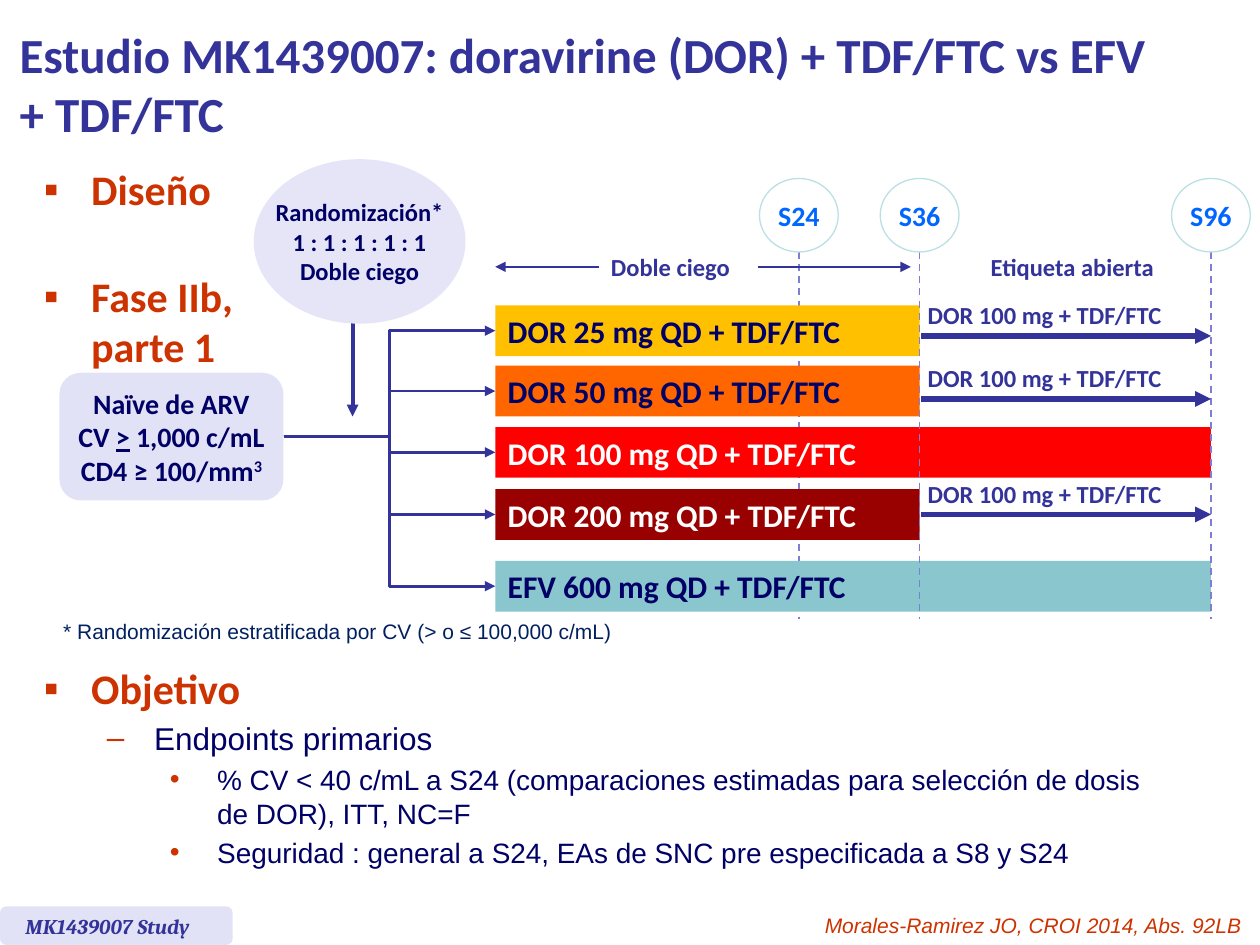
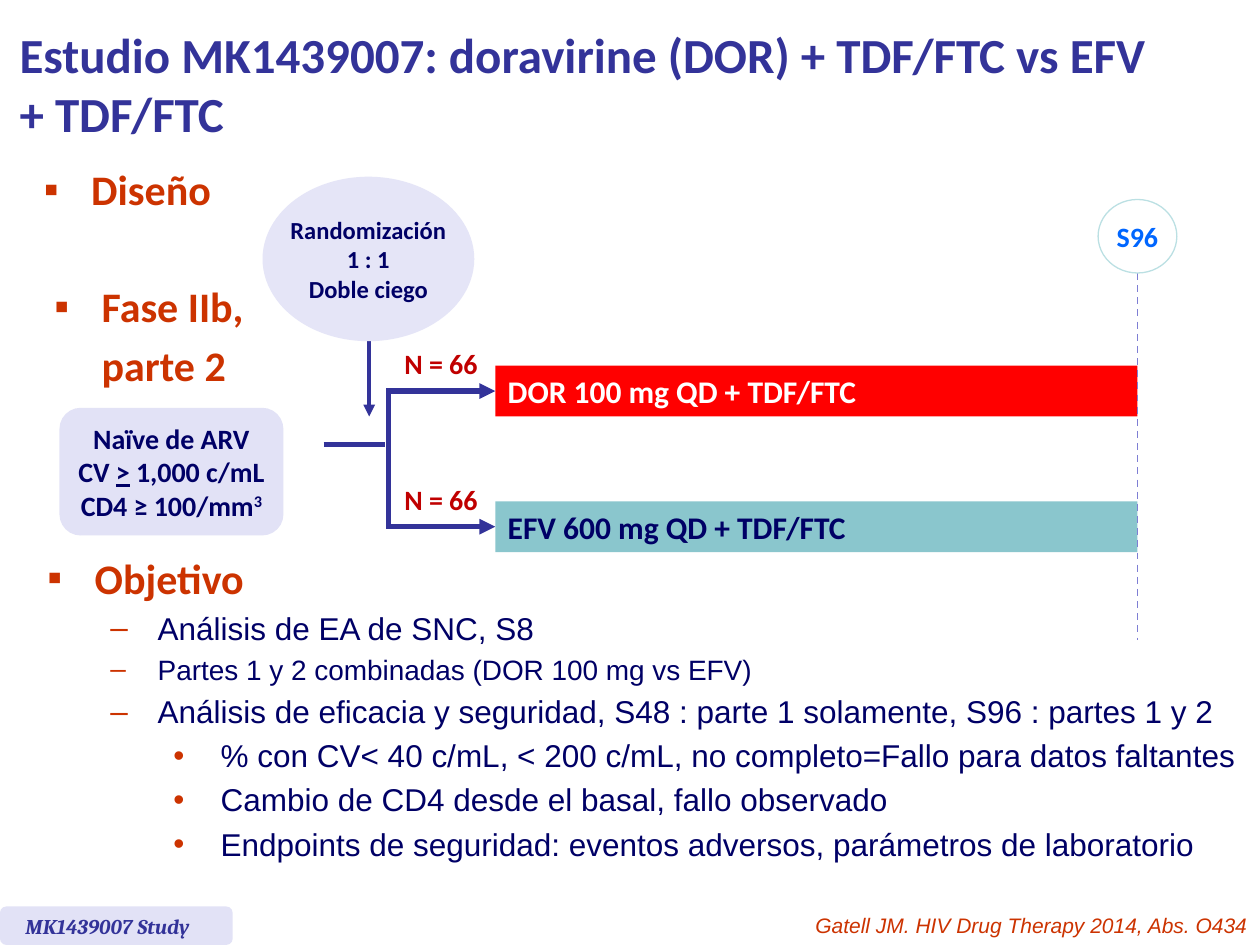
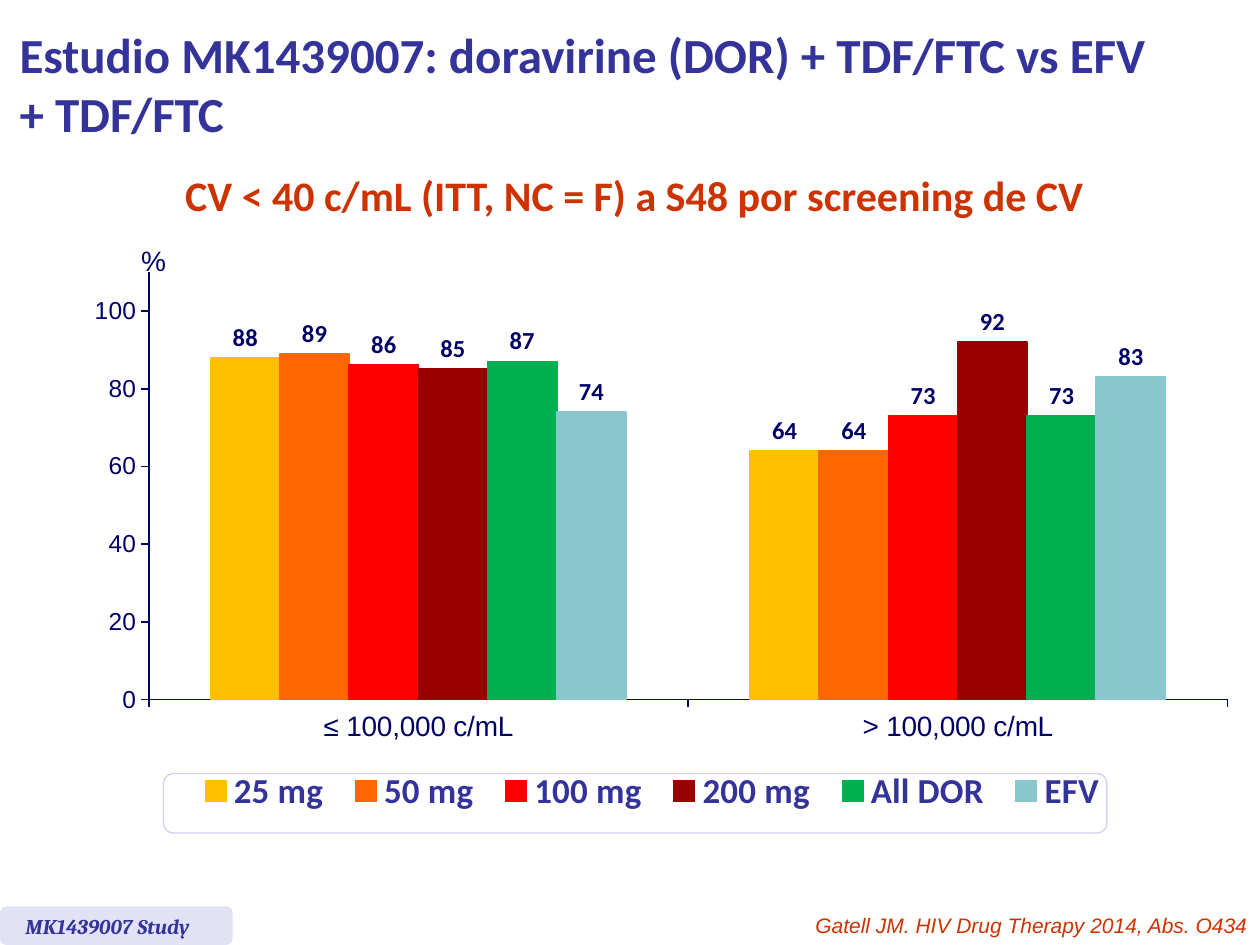
from dataclasses import dataclass

from lxml import etree
from pptx import Presentation
from pptx.chart.data import CategoryChartData
from pptx.dml.color import RGBColor
from pptx.enum.chart import XL_CHART_TYPE as CHART, XL_LABEL_POSITION as LABEL
from pptx.enum.chart import XL_LEGEND_POSITION as LEGEND, XL_TICK_MARK as TICK
from pptx.enum.dml import MSO_LINE
from pptx.enum.shapes import MSO_CONNECTOR as CONN, MSO_SHAPE as SHAPE
from pptx.enum.text import MSO_ANCHOR as ANCHOR, MSO_AUTO_SIZE as AUTO, PP_ALIGN as ALIGN
from pptx.oxml.ns import qn
from pptx.util import Pt


@dataclass(frozen=True)
class Theme:
    indigo: str = "333399"
    navy: str = "000066"
    note: str = "002060"
    rust: str = "CC3300"
    count: str = "C00000"
    week: str = "0066FF"
    week_edge: str = "BBE0E3"
    dash: str = "7E7ED4"
    lilac: str = "E5E5F7"
    panel: str = "E2E2F6"
    legend_edge: str = "D0D0F0"
    white: str = "FFFFFF"
    dor25: str = "FFC000"
    dor50: str = "FF6600"
    dor100: str = "FF0000"
    dor200: str = "990000"
    all_dor: str = "00B050"
    efv: str = "8AC6CD"
    title: int = 28
    heading: int = 24
    legend: int = 20
    body: int = 18
    label: int = 16
    small: int = 14
    foot: int = 12
    main: str = "Calibri"
    plain: str = "Arial"
    serif: str = "Cambria"


T = Theme()
TITLE = "Estudio MK1439007: doravirine (DOR) + TDF/FTC vs EFV \v+ TDF/FTC"
GATELL = "Gatell JM. HIV Drug Therapy 2014, Abs. O434"
CRITERIA = ["Naïve de ARV", [("CV ", ""), (">", "under"), (" 1,000 c/mL", "")],
            [("CD4 ≥ 100/mm", ""), ("3", "super")]]
BAR_X, BAR_H = 283, 29
HANG = 27
BULLETS = {0: ("▪", 27), 1: ("–", 63), 2: ("•", 99)}


def rgb(color):
    return RGBColor.from_string(color)


def set_font(font, size, color, name=T.main, bold=False, italic=False):
    font.size, font.name = Pt(size), name
    font.bold, font.italic = bold, italic
    font.color.rgb = rgb(color)


def write(tf, lines, size, color, align=ALIGN.LEFT, **font):
    """Fill a frame; a line is a string or a list of (text, mark) runs."""
    for i, line in enumerate(lines):
        p = tf.paragraphs[0] if i == 0 else tf.add_paragraph()
        p.alignment = align
        if isinstance(line, str):
            p.text = line
        else:
            for text, mark in line:
                r = p.add_run()
                r.text = text
                if mark == "under":
                    r.font.underline = True
                elif mark == "super":
                    r._r.get_or_add_rPr().set("baseline", "30000")
        set_font(p.font, size, color, **font)


def add_text(s, x, y, w, h, lines, size, color, align=ALIGN.LEFT, **font):
    tf = s.shapes.add_textbox(Pt(x), Pt(y), Pt(w), Pt(h)).text_frame
    tf.word_wrap = True
    write(tf, lines, size, color, align, **font)


def add_block(s, kind, x, y, w, h, fill, edge=None):
    sp = s.shapes.add_shape(kind, Pt(x), Pt(y), Pt(w), Pt(h))
    sp.shadow.inherit = False
    sp.fill.solid()
    sp.fill.fore_color.rgb = rgb(fill)
    if edge:
        sp.line.color.rgb = rgb(edge)
        sp.line.width = Pt(0.75)
    else:
        sp.line.fill.background()
    sp.text_frame.vertical_anchor = ANCHOR.MIDDLE
    sp.text_frame.word_wrap = False
    return sp


def add_line(s, x1, y1, x2, y2, width, color=T.indigo, kind=CONN.STRAIGHT,
             arrow=True, dashed=False):
    c = s.shapes.add_connector(kind, Pt(x1), Pt(y1), Pt(x2), Pt(y2))
    c.line.color.rgb = rgb(color)
    c.line.width = Pt(width)
    if dashed:
        c.line.dash_style = MSO_LINE.DASH
    sp_pr = c._element.spPr
    if arrow:
        etree.SubElement(sp_pr.find(qn("a:ln")), qn("a:tailEnd"), type="triangle")
    etree.SubElement(sp_pr, qn("a:effectLst"))
    return c


def add_bullets(s, x, y, w, h, items, gap=0.2):
    """Items are (level, text, size); level None continues a heading unmarked."""
    tf = s.shapes.add_textbox(Pt(x), Pt(y), Pt(w), Pt(h)).text_frame
    tf.word_wrap = True
    for i, (level, text, size) in enumerate(items):
        p = tf.paragraphs[0] if i == 0 else tf.add_paragraph()
        p.text = text
        if i:
            p.space_before = Pt(round(size * gap, 1))
        mark, margin = BULLETS[level or 0]
        p_pr = p._p.get_or_add_pPr()
        p_pr.set("marL", str(Pt(margin)))
        p_pr.set("indent", str(0 if level is None else -Pt(HANG)))
        if level is not None:
            color = etree.SubElement(p_pr, qn("a:buClr"))
            etree.SubElement(color, qn("a:srgbClr"), val=T.rust)
            etree.SubElement(p_pr, qn("a:buFont"), typeface=T.plain)
            etree.SubElement(p_pr, qn("a:buChar"), char=mark)
        if level:
            set_font(p.font, size, T.navy, T.plain)
        else:
            set_font(p.font, size, T.rust, bold=True)


def add_slide(prs, citation):
    s = prs.slides.add_slide(prs.slide_layouts[5])
    title = s.shapes.title
    title.left, title.top, title.width, title.height = Pt(4), Pt(4), Pt(711), Pt(87)
    tf = title.text_frame
    tf.auto_size, tf.word_wrap = AUTO.NONE, True
    tf.vertical_anchor = ANCHOR.MIDDLE
    write(tf, [TITLE], T.title, T.indigo, bold=True)

    chip = add_block(s, SHAPE.ROUNDED_RECTANGLE, 0, 518, 133, 22, T.panel)
    chip.text_frame.margin_left = Pt(13.5)
    chip.text_frame.word_wrap = True
    write(chip.text_frame, ["MK1439007 Study"], T.foot, T.indigo,
          name=T.serif, bold=True, italic=True)
    add_text(s, 420, 518, 300, 22, [citation], T.foot, T.rust, ALIGN.RIGHT,
             name=T.plain, italic=True)
    return s


def add_week(s, week, x, y):
    """Draw a week circle centred on x, with its dashed line below."""
    w, h = 45, 42
    add_line(s, x, y + h, x, y + 252, 1, T.dash, arrow=False, dashed=True)
    sp = add_block(s, SHAPE.OVAL, x - w / 2, y, w, h, T.white, T.week_edge)
    write(sp.text_frame, [week], T.label, T.week, ALIGN.CENTER, bold=True)


def add_arm(s, drug, y, end, fill, color=T.navy):
    sp = add_block(s, SHAPE.RECTANGLE, BAR_X, y, end - BAR_X, BAR_H, fill)
    sp.text_frame.word_wrap = True
    write(sp.text_frame, [f"{drug} mg QD + TDF/FTC"], T.body, color, bold=True)
    return sp


def add_randomization(s, x, y, arrow_x, lines):
    add_line(s, arrow_x, 181, arrow_x, 238, 2.25)
    sp = add_block(s, SHAPE.OVAL, x, y, 121, 94, T.lilac)
    write(sp.text_frame, lines, T.small, T.navy, ALIGN.CENTER, bold=True)


def add_population(s, y):
    sp = add_block(s, SHAPE.ROUNDED_RECTANGLE, 34, y, 128, 73, T.panel)
    write(sp.text_frame, CRITERIA, T.label, T.navy, ALIGN.CENTER, bold=True)
    return sp


def add_design_headings(s, part, x, y, gap):
    add_bullets(s, 18, 90, 143, 45, [(0, "Diseño", T.heading)])
    add_bullets(s, x, y, 140, 66,
                [(0, "Fase IIb,", T.heading), (None, part, T.heading)], gap)


def build_part1(prs):
    s = add_slide(prs, "Morales-Ramirez JO, CROI 2014, Abs. 92LB ")
    w24, w36, w96, week_y = 456.5, 525.5, 692, 102
    add_week(s, "S24", w24, week_y)
    add_design_headings(s, "parte 1", 18, 151, 0)
    add_randomization(s, 145, 91, 201.5, ["Randomización*", "1 : 1 : 1 : 1 : 1", "Doble ciego"])
    population = add_population(s, 213)

    arms = [("DOR 25", 174.5, w36, T.dor25, T.navy),
            ("DOR 50", 209, w36, T.dor50, T.navy),
            ("DOR 100", 244, w96, T.dor100, T.white),
            ("DOR 200", 279.5, w36, T.dor200, T.white),
            ("EFV 600", 320.5, w96, T.efv, T.navy)]
    for arm in arms:
        bar = add_arm(s, *arm)
        c = add_line(s, 162, 250, BAR_X, 250, 1.5, kind=CONN.ELBOW)
        c.begin_connect(population, 3)
        c.end_connect(bar, 1)
    for week, x in (("S36", w36), ("S96", w96)):
        add_week(s, week, x, week_y)

    for y in (192, 228, 294):
        add_line(s, w36 + 1, y, w96, y, 3)
        add_text(s, 523, y - 24, 175, 24, ["DOR 100 mg + TDF/FTC"],
                 T.small, T.indigo, bold=True)
    for x, w, period in ((342, 90, "Doble ciego"), (559, 120, "Etiqueta abierta")):
        add_text(s, x, 140.5, w, 24, [period], T.small, T.indigo, bold=True)
    for start, end in ((342, BAR_X), (433, 520.5)):
        add_line(s, start, 152.5, end, 152.5, 1.5)

    add_text(s, 29, 350, 345, 22, ["* Randomización estratificada por CV (> o ≤ 100,000 c/mL)"],
             T.foot, T.note, name=T.plain)
    add_bullets(s, 18, 375, 702, 150, [
        (0, "Objetivo", T.heading),
        (1, "Endpoints primarios", T.body),
        (2, "% CV < 40 c/mL a S24 (comparaciones estimadas para selección de dosis"
            "\vde DOR), ITT, NC=F", T.label),
        (2, "Seguridad : general a S24, EAs de SNC pre especificada a S8 y S24", T.label)])


def build_part2(prs):
    s = add_slide(prs, GATELL)
    w96, trunk_x = 650, 222
    add_design_headings(s, "parte 2", 24, 157, 0.2)
    add_randomization(s, 150, 101, 211, ["Randomización", "1 : 1", "Doble ciego"])
    add_population(s, 233)
    add_line(s, 185, 254, 220, 254, 3, arrow=False)

    arms = [("DOR 100", 209, T.dor100, T.white), ("EFV 600", 286.5, T.efv, T.navy)]
    for drug, y, fill, color in arms:
        bar = add_arm(s, drug, y, w96, fill, color)
        middle = y + BAR_H / 2
        add_line(s, trunk_x, middle, BAR_X, middle, 3).end_connect(bar, 1)
        add_text(s, 217, y - 14.5, 70, 27, ["N = 66"], T.label, T.count,
                 ALIGN.CENTER, bold=True)
    top, bottom = (y + BAR_H / 2 for _, y, *_ in arms)
    add_line(s, trunk_x, top - 1.5, trunk_x, bottom + 1.5, 3, arrow=False)
    add_week(s, "S96", w96, 114)

    add_bullets(s, 20, 312, 708, 206, [
        (0, "Objetivo", T.heading),
        (1, "Análisis de EA de SNC, S8", T.body),
        (1, "Partes 1 y 2 combinadas (DOR 100 mg vs EFV)", T.label),
        (1, "Análisis de eficacia y seguridad, S48 : parte 1 solamente, S96 : partes 1 y 2", T.body),
        (2, "% con CV< 40 c/mL, < 200 c/mL, no completo=Fallo para datos faltantes", T.body),
        (2, "Cambio de CD4 desde el basal, fallo observado", T.body),
        (2, "Endpoints de seguridad: eventos adversos, parámetros de laboratorio", T.body)])


def set_layout(parent, index, x, y, w, h, inner=False):
    """Place a chart part by fractions of the chart area."""
    for old in parent.findall(qn("c:layout")):
        parent.remove(old)
    layout = etree.Element(qn("c:layout"))
    manual = etree.SubElement(layout, qn("c:manualLayout"))
    if inner:
        etree.SubElement(manual, qn("c:layoutTarget"), val="inner")
    for mode in ("xMode", "yMode"):
        etree.SubElement(manual, qn(f"c:{mode}"), val="edge")
    for key, value in (("x", x), ("y", y), ("w", w), ("h", h)):
        etree.SubElement(manual, qn(f"c:{key}"), val=str(value))
    parent.insert(index, layout)


def format_axis(axis, size):
    axis.has_major_gridlines = False
    axis.major_tick_mark, axis.minor_tick_mark = TICK.OUTSIDE, TICK.NONE
    axis.format.line.color.rgb = rgb(T.navy)
    axis.format.line.width = Pt(1)
    set_font(axis.tick_labels.font, size, T.navy, T.plain)


def add_response_chart(s):
    doses = [("25 mg", (88, 64), T.dor25), ("50 mg", (89, 64), T.dor50),
             ("100 mg", (86, 73), T.dor100), ("200 mg", (85, 92), T.dor200),
             ("All DOR", (87, 73), T.all_dor), ("EFV", (74, 83), T.efv)]
    data = CategoryChartData(number_format="0")
    data.categories = ["≤ 100,000 c/mL", "> 100,000 c/mL"]
    for name, values, _ in doses:
        data.add_series(name, values)
    chart = s.shapes.add_chart(CHART.COLUMN_CLUSTERED, Pt(16.5), Pt(128), Pt(685.5),
                               Pt(344), data).chart
    chart.has_title = False
    chart.font.size, chart.font.name = Pt(T.body), T.main

    plot = chart.plots[0]
    plot.vary_by_categories = False
    plot.gap_width, plot.overlap = 179, 0
    for series, (_, _, color) in zip(plot.series, doses):
        series.format.fill.solid()
        series.format.fill.fore_color.rgb = rgb(color)
        series.format.line.color.rgb = rgb(color)
        series.format.line.width = Pt(1)
    plot.has_data_labels = True
    labels = plot.data_labels
    labels.show_value, labels.position = True, LABEL.OUTSIDE_END
    labels.number_format, labels.number_format_is_linked = "#,##0", False
    set_font(labels.font, T.small, T.navy, bold=True)

    format_axis(chart.category_axis, T.label)
    axis = chart.value_axis
    format_axis(axis, T.small)
    axis.minimum_scale, axis.maximum_scale, axis.major_unit = 0, 110, 20

    chart.has_legend = True
    legend = chart.legend
    legend.position, legend.include_in_layout = LEGEND.BOTTOM, False
    set_font(legend.font, T.legend, T.indigo, bold=True)
    set_layout(legend._element, 1, 0.13, 0.91, 0.78, 0.08)
    plot_area = chart._chartSpace.chart.plotArea
    set_layout(plot_area, 0, 0.1, 0.08, 0.9, 0.71, inner=True)


def build_results(prs):
    s = add_slide(prs, GATELL)
    add_block(s, SHAPE.ROUNDED_RECTANGLE, 93.5, 442, 539, 34, T.white, T.legend_edge)
    add_response_chart(s)
    add_text(s, 85, 93.5, 555, 36, ["CV < 40 c/mL (ITT, NC = F) a S48 por screening de CV"],
             T.heading, T.rust, ALIGN.CENTER, bold=True)
    add_text(s, 73.5, 135.5, 32, 27, ["%"], T.label, T.navy, name=T.plain)


def main():
    prs = Presentation()
    prs.slide_width, prs.slide_height = Pt(720), Pt(540)
    build_part1(prs)
    build_part2(prs)
    build_results(prs)
    prs.save("out.pptx")


if __name__ == "__main__":
    main()
